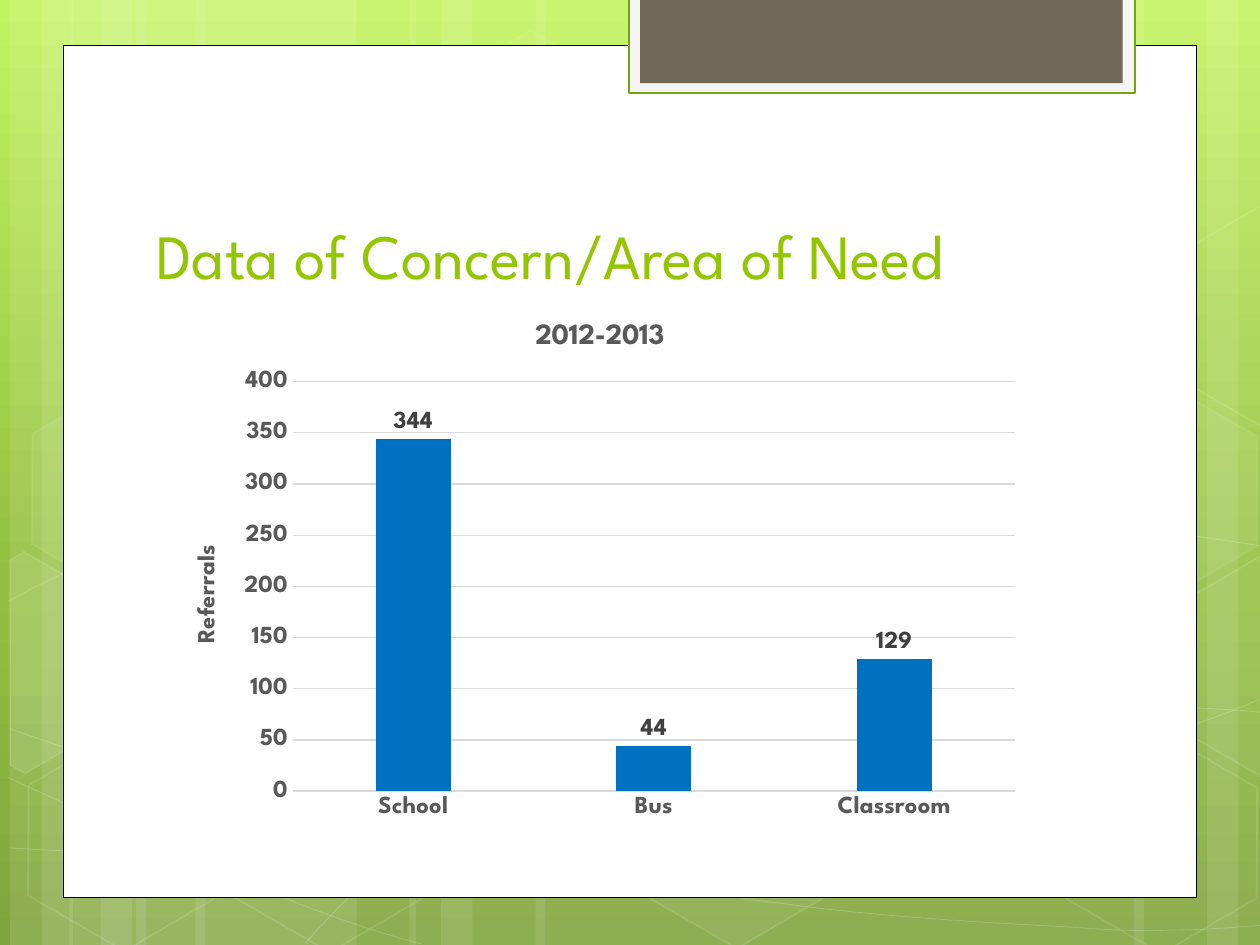
from copy import deepcopy

from pptx import Presentation, util as u
from pptx.chart.data import CategoryChartData
from pptx.dml.color import RGBColor
from pptx.enum import chart as ch, shapes as sh, text as tx
from pptx.oxml.ns import qn
from pptx.oxml.xmlchemy import OxmlElement

PX = u.Inches(1) // 100
FONT = "League Spartan"
COLORS = {
    "sky": "C3F35F", "leaf": "93BF3F", "moss": "81A53E", "white": "FFFFFF",
    "black": "000000", "tab": "F5F5F5", "tab_edge": "74A510", "stone": "71685A",
    "title": "94C600", "bar": "0070C0", "axis": "595959", "label": "404040",
    "grid": "D9D9D9",
}
STRIPES = [(108, 175), (8, 50), (33, 83), (155, 175), (55, 50), (80, 83), (733, 175),
           (958, 50), (900, 83), (425, 308), (325, 50), (350, 83)]
CURVES = [
    [(7, 673), (61, 676), (115, 679), (190, 678), (265, 677), (358, 675), (458, 665),
     (558, 655), (700, 636), (792, 617), (883, 598), (977, 568), (1007, 551)],
    [(7, 477), (36, 461), (65, 446), (121, 431), (178, 416), (259, 394), (347, 387),
     (436, 380), (544, 379), (654, 387), (764, 395), (947, 426), (1007, 434)],
    [(6, 617), (127, 672), (247, 727), (334, 749)],
    [(7, 578), (38, 589), (70, 600), (128, 616), (186, 631), (273, 656), (357, 673),
     (440, 690), (545, 708), (628, 718), (711, 729), (800, 733), (853, 736),
     (905, 740), (919, 738), (945, 738), (971, 737), (989, 735), (1007, 734)],
    [(242, 749), (260, 729), (278, 709), (302, 691), (326, 673), (360, 653), (388, 639),
     (416, 625), (433, 619), (470, 609), (506, 599), (573, 585), (608, 578),
     (644, 571), (649, 571), (680, 569), (711, 566), (760, 563), (794, 562),
     (829, 561), (886, 562), (886, 562), (908, 562), (931, 562), (953, 562),
     (971, 563), (988, 564), (997, 565), (1006, 566), (1003, 565), (1006, 566)],
]
HEXAGONS = [(334, 36, 4, 8), (497, 589, 6, 12), (11, 591, 0, 12), (14, 312, 7, 8),
            (174, 592, 0, 12), (753, 453, 10, 12), (834, 593, 0, 12), (834, 314, 7, 8)]
CUT_HEXAGONS = [
    ([(8, 445), (19, 438), (96, 482), (95, 570), (20, 614), (8, 607)], 10),
    ([(926, 485), (1001, 441), (1009, 446), (1009, 613), (1002, 617), (926, 573)], 4),
    ([(926, 207), (1001, 163), (1010, 168), (1009, 335), (1002, 339), (926, 295)], 0),
]


def rgb(name):
    """Return the named palette colour."""
    return RGBColor.from_string(COLORS[name])


def place(shape, box):
    """Move and size a shape to a px box."""
    shape.left, shape.top, shape.width, shape.height = (n * PX for n in box)


def paint(shape, fill=None, fill_alpha=100, line=None, width=1, line_alpha=100):
    """Set fill, outline and their opacities in percent."""
    shape.shadow.inherit = False
    for name, alpha, part, path in (
        (fill, fill_alpha, shape.fill, "a:solidFill/a:srgbClr"),
        (line, line_alpha, shape.line.fill, "a:ln/a:solidFill/a:srgbClr"),
    ):
        if not name or not alpha:
            part.background()
            continue
        part.solid()
        part.fore_color.rgb = rgb(name)
        if alpha < 100:
            opacity = OxmlElement("a:alpha")
            opacity.set("val", str(alpha * 1000))
            shape._element.spPr.xpath(path)[0].append(opacity)
    if line:
        shape.line.width = u.Pt(width)


def add_preset(slide, kind, box, **look):
    """Add a painted preset shape in a px box."""
    shape = slide.shapes.add_shape(kind, *(n * PX for n in box))
    paint(shape, **look)
    return shape


def add_outline(slide, points, close, **look):
    """Add a painted freeform through px points."""
    builder = slide.shapes.build_freeform(*points[0], scale=PX)
    builder.add_line_segments(points[1:], close=close)
    shape = builder.convert_to_shape()
    paint(shape, **look)
    return shape


def bend(shape):
    """Turn each three line segments of a freeform into one cubic curve."""
    segments = shape._element.spPr.xpath(".//a:lnTo")
    for start in range(0, len(segments), 3):
        curve = OxmlElement("a:cubicBezTo")
        segments[start].addprevious(curve)
        for segment in segments[start:start + 3]:
            curve.append(segment[0])
            segment.getparent().remove(segment)


def style(font, size, color, bold=False):
    """Format a font."""
    font.name, font.size, font.bold = FONT, u.Pt(size), bold
    font.color.rgb = rgb(color)


def write(frame, words, align=None, **look):
    """Put one formatted run of text in a text frame."""
    paragraph = frame.paragraphs[0]
    if align is not None:
        paragraph.alignment = align
    run = paragraph.add_run()
    run.text = words
    style(run.font, **look)


def draw_backdrop(slide, box):
    """Fill the page with the gradient, stripes, curves and hexagons."""
    left, top, _, height = box
    fill = slide.background.fill
    fill.gradient()
    fill.gradient_angle = 270
    stop_list = slide._element.find(".//" + qn("a:gsLst"))
    stop_list.append(deepcopy(stop_list[-1]))
    for stop, name, position in zip(fill.gradient_stops, ("sky", "leaf", "moss"), (0, 0.62, 1)):
        stop.color.rgb = rgb(name)
        stop.position = position
    for x, width in STRIPES:
        add_preset(slide, sh.MSO_SHAPE.RECTANGLE, (left + x, top, width, height),
                   fill="white", fill_alpha=10)
    for knots in CURVES:
        points = [(left + x, top + y) for x, y in knots]
        bend(add_outline(slide, points, False, line="white", width=0.5, line_alpha=20))
    for x, y, fill_alpha, line_alpha in HEXAGONS:
        hexagon = add_preset(slide, sh.MSO_SHAPE.HEXAGON, (left + x, top + y, 175, 152),
                             fill="white", fill_alpha=fill_alpha,
                             line="white", line_alpha=line_alpha)
        hexagon.adjustments[0] = 0.285
        hexagon.rotation = 30
    for corners, fill_alpha in CUT_HEXAGONS:
        points = [(left + x, top + y) for x, y in corners]
        add_outline(slide, points, True, fill="white", fill_alpha=fill_alpha,
                    line="white", line_alpha=12)


def draw_panel(slide, box):
    """Draw the white panel with the tab hanging at its upper right."""
    left, top, _, _ = box
    rectangle = sh.MSO_SHAPE.RECTANGLE
    add_preset(slide, rectangle, box, fill="white", line="black", width=0.5)
    add_preset(slide, rectangle, (left + 449, top - 38, 402, 76),
               fill="tab", line="tab_edge", width=1.25)
    add_preset(slide, rectangle, (left + 458, top - 38, 383, 68), fill="stone")


def draw_title(slide, box):
    """Place the title above the panel."""
    title = slide.shapes.title
    place(title, box)
    title._element.getparent().append(title._element)
    title.text_frame.vertical_anchor = tx.MSO_ANCHOR.BOTTOM
    title.text_frame.word_wrap = True
    write(title.text_frame, "Data of Concern/Area of Need", align=tx.PP_ALIGN.LEFT,
          size=36, color="title")


def draw_referrals(slide, box):
    """Draw the column chart of referrals by area."""
    data = CategoryChartData()
    data.categories = ["School", "Bus", "Classroom"]
    data.add_series("2012-2013", (344, 44, 129))
    chart = slide.shapes.add_chart(ch.XL_CHART_TYPE.COLUMN_CLUSTERED,
                                   *(n * PX for n in box), data).chart
    style(chart.font, 14, "black", True)
    chart.has_legend = False
    chart.has_title = True
    write(chart.chart_title.text_frame, "2012-2013", size=16.8, color="axis", bold=True)
    chart.chart_title.include_in_layout = False

    areas, counts = chart.category_axis, chart.value_axis
    for axis in (areas, counts):
        axis.major_tick_mark = axis.minor_tick_mark = ch.XL_TICK_MARK.NONE
        style(axis.tick_labels.font, 14, "axis", True)
    counts.minimum_scale, counts.maximum_scale, counts.major_unit = 0, 400, 50
    counts.format.line.fill.background()
    for rule in (areas.format.line, counts.major_gridlines.format.line):
        rule.color.rgb = rgb("grid")
        rule.width = u.Pt(0.75)
    caption = counts.axis_title.text_frame
    write(caption, "Referrals", size=14, color="axis", bold=True)
    caption._txBody.bodyPr.set("rot", "-5400000")
    caption._txBody.bodyPr.set("vert", "horz")

    plot = chart.plots[0]
    plot.gap_width, plot.overlap, plot.vary_by_categories = 219, -27, False
    bars = plot.series[0]
    bars.format.fill.solid()
    bars.format.fill.fore_color.rgb = rgb("bar")
    labels = bars.data_labels
    labels.show_value = True
    labels.position = ch.XL_LABEL_POSITION.OUTSIDE_END
    style(labels.font, 14, "label", True)


def main():
    """Build and save the slide."""
    deck = Presentation()
    deck.slide_width, deck.slide_height = 1000 * PX, 750 * PX
    slide = deck.slides.add_slide(deck.slide_layouts.get_by_name("Title Only"))
    draw_backdrop(slide, (0, 0, 1000, 750))
    draw_panel(slide, (50, 36, 900, 676))
    draw_title(slide, (114, 112, 768, 125))
    draw_referrals(slide, (133, 237, 686, 421))
    deck.save("out.pptx")


if __name__ == "__main__":
    main()
